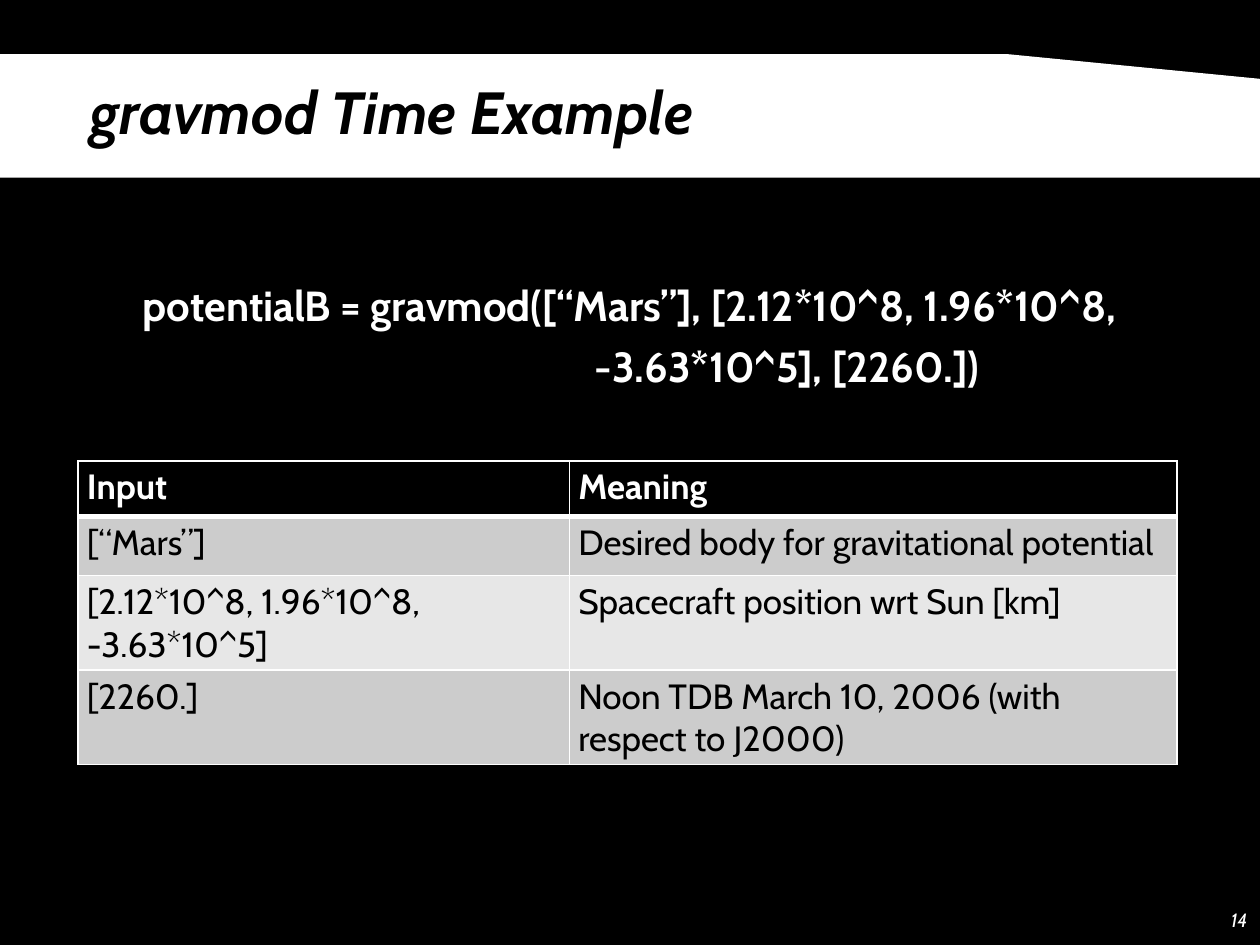
from lxml import etree
from pptx import Presentation
from pptx.dml.color import RGBColor
from pptx.enum.shapes import MSO_SHAPE
from pptx.enum.text import MSO_ANCHOR, PP_ALIGN
from pptx.oxml.ns import qn
from pptx.util import Inches, Pt

BANNER = MSO_SHAPE.FLOWCHART_CARD
LEFT, CENTER, RIGHT = PP_ALIGN.LEFT, PP_ALIGN.CENTER, PP_ALIGN.RIGHT
TOP, MIDDLE = MSO_ANCHOR.TOP, MSO_ANCHOR.MIDDLE

WIDTH, HEIGHT = Inches(10), Inches(7.5)
COLUMNS, ROWS = 100, 75
FONT = "Cabin"
BLACK, WHITE = "000000", "FFFFFF"
BANDS = ["CCCCCC", "E7E7E7"]

INPUT_COLUMNS = [39, 48.2]
INPUT_ROWS = [4.4, 4.7, 7.5, 7.5]
INPUTS = [
    ("Input", "Meaning"),
    ("[“Mars”]", "Desired body for gravitational potential"),
    ("[2.12*10^8, 1.96*10^8, -3.63*10^5]", "Spacecraft position wrt Sun [km]"),
    ("[2260.]", "Noon TDB March 10, 2006 (with respect to\u00a0J2000)"),
]


def color(code):
    return RGBColor.from_string(code)


def across(columns):
    return round(WIDTH * columns / COLUMNS)


def down(rows):
    return round(HEIGHT * rows / ROWS)


def area(left, top, width, height):
    return across(left), down(top), across(width), down(height)


def paint(target, code):
    target.fill.solid()
    target.fill.fore_color.rgb = color(code)


def style(paragraph, size, code, bold=False, italic=False):
    font = paragraph.font
    font.name, font.size = FONT, Pt(size)
    font.bold, font.italic = bold, italic
    font.color.rgb = color(code)


def add_banner(slide, place):
    banner = slide.shapes.add_shape(BANNER, *place)
    banner.shadow.inherit = False
    banner.line.fill.background()
    paint(banner, WHITE)
    banner._element.spPr.find(qn("a:xfrm")).set("flipH", "1")


def add_text(slide, place, lines, size, code, align=LEFT, anchor=TOP, **emphasis):
    frame = slide.shapes.add_textbox(*place).text_frame
    frame.word_wrap = True
    frame.vertical_anchor = anchor
    frame.text = "\n".join(lines)
    for paragraph in frame.paragraphs:
        paragraph.alignment = align
        style(paragraph, size, code, **emphasis)
    return frame.paragraphs


def add_border(cell, side, points):
    properties = cell._tc.get_or_add_tcPr()
    line = etree.SubElement(properties, qn("a:" + side), w=str(Pt(points)))
    fill = etree.SubElement(line, qn("a:solidFill"))
    etree.SubElement(fill, qn("a:srgbClr"), val=WHITE)


def fill_cell(cell, text, row):
    header = row == 0
    cell.text = text
    cell.margin_left = cell.margin_right = across(0.7)
    cell.margin_top = cell.margin_bottom = down(0.4)
    style(cell.text_frame.paragraphs[0], 20, WHITE if header else BLACK, bold=header)
    for side in ("lnL", "lnR"):
        add_border(cell, side, 1)
    add_border(cell, "lnT", 3 if row == 1 else 1)
    add_border(cell, "lnB", 3 if header else 1)
    paint(cell, BLACK if header else BANDS[(row - 1) % 2])


def add_inputs(slide, left, top):
    place = area(left, top, sum(INPUT_COLUMNS), sum(INPUT_ROWS))
    table = slide.shapes.add_table(len(INPUTS), len(INPUT_COLUMNS), *place).table
    for column, width in zip(table.columns, INPUT_COLUMNS):
        column.width = across(width)
    for row, (texts, height) in enumerate(zip(INPUTS, INPUT_ROWS)):
        table.rows[row].height = down(height)
        for column, text in enumerate(texts):
            fill_cell(table.cell(row, column), text, row)


def main():
    deck = Presentation()
    deck.slide_width, deck.slide_height = WIDTH, HEIGHT
    slide = deck.slides.add_slide(deck.slide_layouts[6])
    paint(slide.background, BLACK)

    add_banner(slide, area(0, 4.3, 100, 9.8))
    title = add_text(slide, area(6.2, 6.1, 89.3, 9.8), ["gravmod Time Example"],
                     34, BLACK, bold=True, italic=True)
    title[0].line_spacing = 0.9
    add_text(slide, area(95.5, 71, 4.5, 4), ["14"], 11, WHITE, RIGHT, MIDDLE, italic=True)
    add_inputs(slide, 6.2, 36.6)

    call = ["potentialB = gravmod([“Mars”], [2.12*10^8, 1.96*10^8,",
            "-3.63*10^5], [2260.])"]
    opening, closing = add_text(slide, area(4.5, 21.7, 90.9, 9.9), call,
                                24, WHITE, CENTER, bold=True)
    opening.space_after = Pt(6)
    closing._p.get_or_add_pPr().set("marL", str(across(25)))

    deck.save("out.pptx")


if __name__ == "__main__":
    main()
